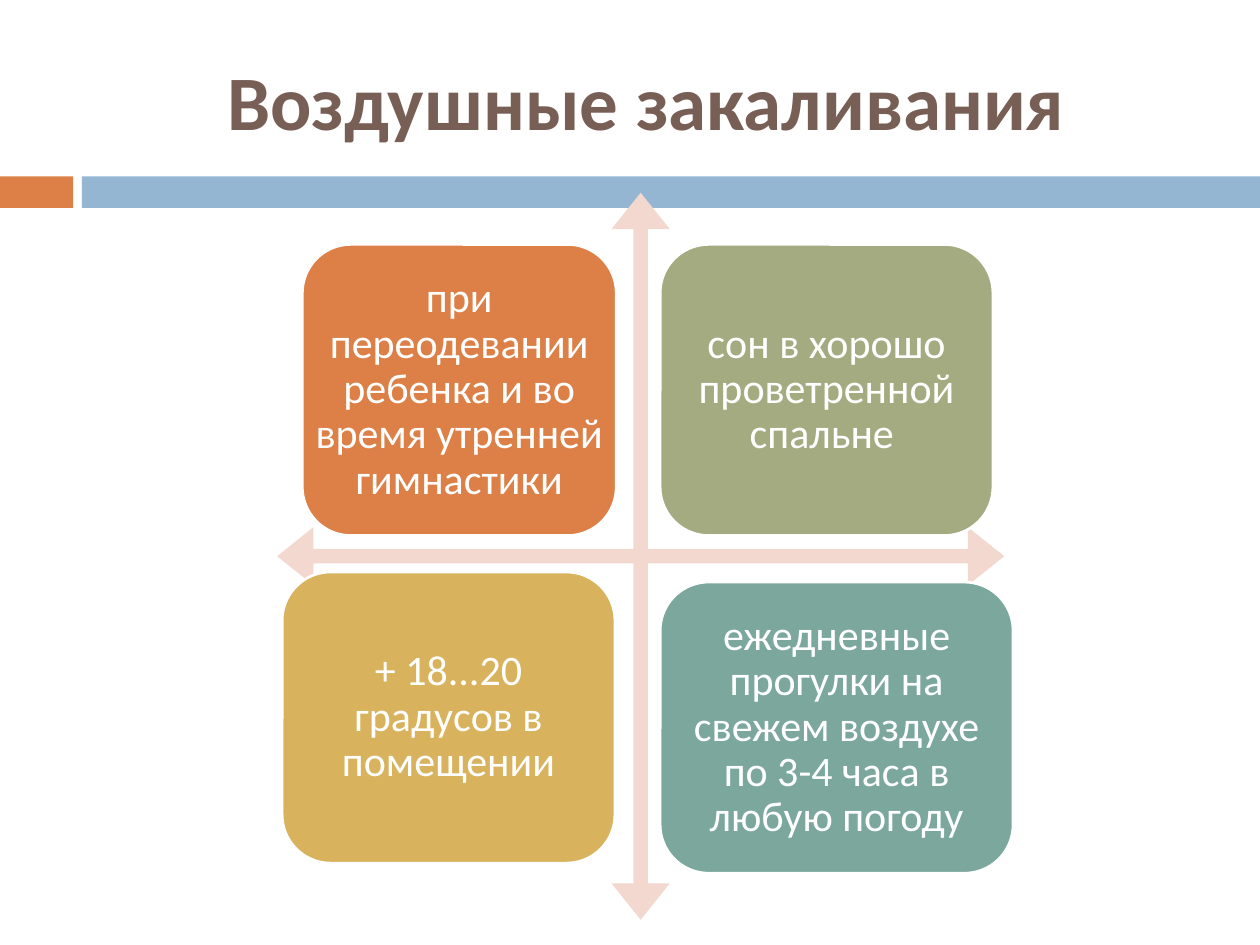
from dataclasses import dataclass

from pptx import Presentation
from pptx.dml.color import RGBColor
from pptx.enum.shapes import MSO_SHAPE
from pptx.enum.text import MSO_ANCHOR, PP_ALIGN
from pptx.shapes.autoshape import Shape
from pptx.slide import Slide
from pptx.util import Inches, Pt

COLORS = {
    "orange": "DD8047",
    "blue": "94B6D2",
    "brown": "775F55",
    "pink": "F2D8CF",
    "green": "A5AB81",
    "gold": "D8B25C",
    "teal": "7BA79D",
    "white": "FFFFFF",
}
FONT = "Calibri"
CARD_H = 2.31
INSET = 0.1


@dataclass
class Card:
    x: float
    y: float
    w: float
    color: str
    text: str


CARDS = [
    Card(2.4, 1.94, 2.49, "orange",
         "при переодевании ребенка и во время утренней гимнастики"),
    Card(5.24, 1.94, 2.64, "green", "сон в хорошо проветренной спальне "),
    Card(2.24, 4.54, 2.64, "gold", "+ 18...20 градусов в помещении"),
    Card(5.24, 4.62, 2.8, "teal",
         "ежедневные прогулки на свежем воздухе по 3-4 часа в любую погоду"),
]


def rgb(name: str) -> RGBColor:
    return RGBColor.from_string(COLORS[name])


def add_filled(s: Slide, kind: MSO_SHAPE, x: float, y: float,
               w: float, h: float, color: str) -> Shape:
    sp = s.shapes.add_shape(kind, Inches(x), Inches(y), Inches(w), Inches(h))
    sp.shadow.inherit = False
    sp.fill.solid()
    sp.fill.fore_color.rgb = rgb(color)
    sp.line.fill.background()
    return sp


def set_text(sp: Shape, text: str, size: int, color: str, bold: bool) -> None:
    tf = sp.text_frame
    tf.text = text
    tf.word_wrap = True
    tf.vertical_anchor = MSO_ANCHOR.MIDDLE
    p = tf.paragraphs[0]
    p.alignment = PP_ALIGN.CENTER
    font = p.runs[0].font
    font.name = FONT
    font.size = Pt(size)
    font.bold = bold
    font.color.rgb = rgb(color)


def add_card(s: Slide, card: Card) -> None:
    sp = add_filled(s, MSO_SHAPE.ROUNDED_RECTANGLE,
                    card.x, card.y, card.w, CARD_H, card.color)
    sp.line.color.rgb = rgb("white")
    sp.line.width = Pt(1.5)
    label = s.shapes.add_textbox(sp.left, sp.top, sp.width, sp.height)
    set_text(label, card.text, 24, "white", False)
    tf = label.text_frame
    tf.margin_left = tf.margin_right = Inches(INSET)
    tf.margin_top = tf.margin_bottom = Inches(INSET)
    tf.paragraphs[0].line_spacing = 0.9


def main() -> None:
    prs = Presentation()
    prs.slide_width, prs.slide_height = Inches(10), Inches(7.5)
    s = prs.slides.add_slide(prs.slide_layouts[5])

    title = s.shapes.title
    title.left, title.top = Inches(0.67), Inches(0.25)
    title.width, title.height = Inches(8.92), Inches(1.08)
    set_text(title, "Воздушные закаливания", 44, "brown", True)

    add_filled(s, MSO_SHAPE.RECTANGLE, 0, 1.4, 0.58, 0.25, "orange")
    add_filled(s, MSO_SHAPE.RECTANGLE, 0.65, 1.4, 9.35, 0.25, "blue")

    cross = add_filled(s, MSO_SHAPE.QUAD_ARROW, 2.2, 1.53, 5.77, 5.77, "pink")
    for i, value in enumerate((0.02, 0.04, 0.05)):
        cross.adjustments[i] = value

    for card in CARDS:
        add_card(s, card)

    prs.save("out.pptx")


if __name__ == "__main__":
    main()
